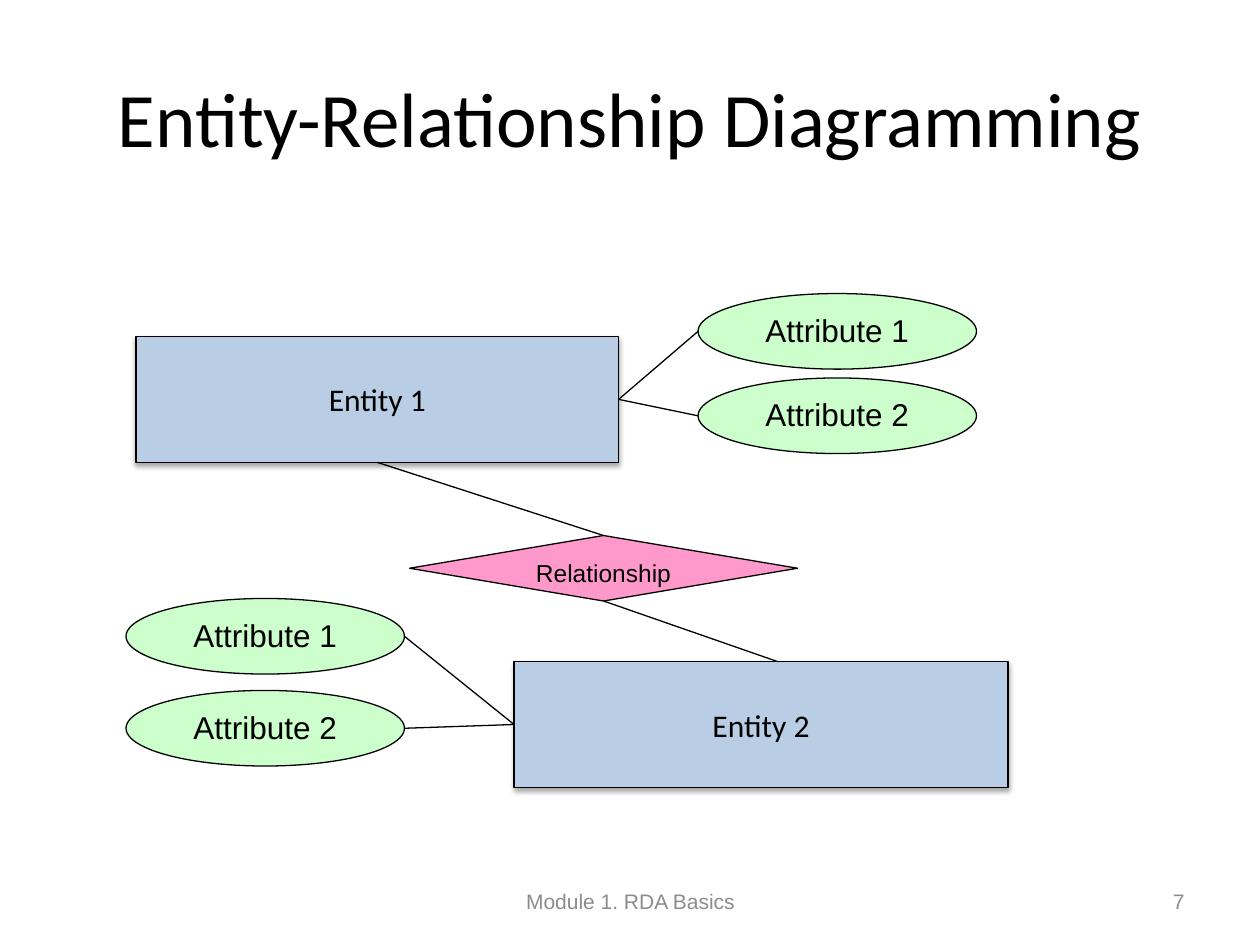
from lxml.etree import SubElement
from pptx import Presentation
from pptx.dml.color import RGBColor
from pptx.enum.shapes import MSO_CONNECTOR, MSO_SHAPE
from pptx.enum.text import MSO_ANCHOR, PP_ALIGN
from pptx.oxml.ns import qn
from pptx.util import Inches, Pt

THEME = {
    "ink": "000000", "muted": "8C8C8C", "line": 0.75,
    "title": {"name": "Calibri", "size": Pt(44)},
    "entity": {"name": "Calibri", "size": Pt(18)},
    "attribute": {"name": "Arial", "size": Pt(18)},
    "relationship": {"name": "Arial", "size": Pt(14)},
    "footer": {"name": "Arial", "size": Pt(12)},
}
KINDS = {
    "entity": (MSO_SHAPE.RECTANGLE, "B9CDE5", MSO_ANCHOR.MIDDLE),
    "relationship": (MSO_SHAPE.FLOWCHART_DECISION, "FF99CC", MSO_ANCHOR.TOP),
    "attribute": (MSO_SHAPE.OVAL, "CCFFCC", MSO_ANCHOR.TOP),
}
TEXTS = [
    ("Entity-Relationship Diagramming", "title", "ink", PP_ALIGN.CENTER, (0.5, 0.3, 9, 1.25)),
    ("Module 1. RDA Basics", "footer", "muted", PP_ALIGN.CENTER, (3.42, 6.95, 3.17, 0.4)),
    ("7", "footer", "muted", PP_ALIGN.RIGHT, (7.17, 6.95, 2.33, 0.4)),
]
ENTITIES = [
    ("Entity 1", (1.08, 2.67, 3.83, 1)),
    ("Entity 2", (4.08, 5.25, 3.92, 1)),
]
RELATIONSHIP = ("Relationship", (3.25, 4.25, 3.08, 0.52))
ATTRIBUTES = ["Attribute 1", "Attribute 2"]
ATTRIBUTE_SIZE = (2.21, 0.6)
ATTRIBUTE_GROUPS = [
    {"left": 5.54, "tops": (2.33, 3), "entity": 0, "side": 3},
    {"left": 1, "tops": (4.75, 5.48), "entity": 1, "side": 1},
]
ENTITY_2_JOIN = (6.17, 5.25)
TOP, LEFT, BOTTOM, RIGHT = range(4)


def rgb(value):
    return RGBColor.from_string(value)


def write(shape, text, style, color, align, anchor):
    tf = shape.text_frame
    tf.word_wrap = True
    tf.vertical_anchor = anchor
    p = tf.paragraphs[0]
    p.alignment = align
    r = p.add_run()
    r.text = text
    for name, value in THEME[style].items():
        setattr(r.font, name, value)
    r.font.color.rgb = rgb(THEME[color])


def outline(line):
    line.color.rgb = rgb(THEME["ink"])
    line.width = Pt(THEME["line"])


def add_shadow(shape):
    effects = shape._element.spPr.find(qn("a:effectLst"))
    shadow = SubElement(effects, qn("a:outerShdw"), blurRad=str(Pt(3.1)),
                        dist=str(Pt(1.8)), dir="5400000", rotWithShape="0")
    color = SubElement(shadow, qn("a:srgbClr"), val=THEME["ink"])
    SubElement(color, qn("a:alpha"), val="35000")


def add_node(s, kind, text, box):
    preset, fill, anchor = KINDS[kind]
    shape = s.shapes.add_shape(preset, *map(Inches, box))
    shape.shadow.inherit = False
    shape.fill.solid()
    shape.fill.fore_color.rgb = rgb(fill)
    outline(shape.line)
    write(shape, text, kind, "ink", PP_ALIGN.CENTER, anchor)
    return shape


def add_link(s, start, node, side):
    x, y = start
    link = s.shapes.add_connector(MSO_CONNECTOR.STRAIGHT, x, y, x, y)
    link.end_connect(node, side)
    outline(link.line)
    SubElement(link._element.spPr, qn("a:effectLst"))
    return link


def main():
    prs = Presentation()
    prs.slide_width, prs.slide_height = Inches(10), Inches(7.5)
    s = prs.slides.add_slide(prs.slide_layouts[6])

    for text, style, color, align, box in TEXTS:
        tb = s.shapes.add_textbox(*map(Inches, box))
        write(tb, text, style, color, align, MSO_ANCHOR.MIDDLE)

    entities = [add_node(s, "entity", *entity) for entity in ENTITIES]
    for entity in entities:
        add_shadow(entity)
    relationship = add_node(s, "relationship", *RELATIONSHIP)

    width, height = ATTRIBUTE_SIZE
    for group in ATTRIBUTE_GROUPS:
        left, side = group["left"], group["side"]
        x = left if side == RIGHT else left + width
        for text, top in zip(ATTRIBUTES, group["tops"]):
            add_node(s, "attribute", text, (left, top, width, height))
            start = Inches(x), Inches(top + height / 2)
            add_link(s, start, entities[group["entity"]], side)

    join = tuple(map(Inches, ENTITY_2_JOIN))
    add_link(s, join, relationship, TOP).begin_connect(entities[0], BOTTOM)
    add_link(s, join, relationship, BOTTOM)

    prs.save("out.pptx")


if __name__ == "__main__":
    main()
